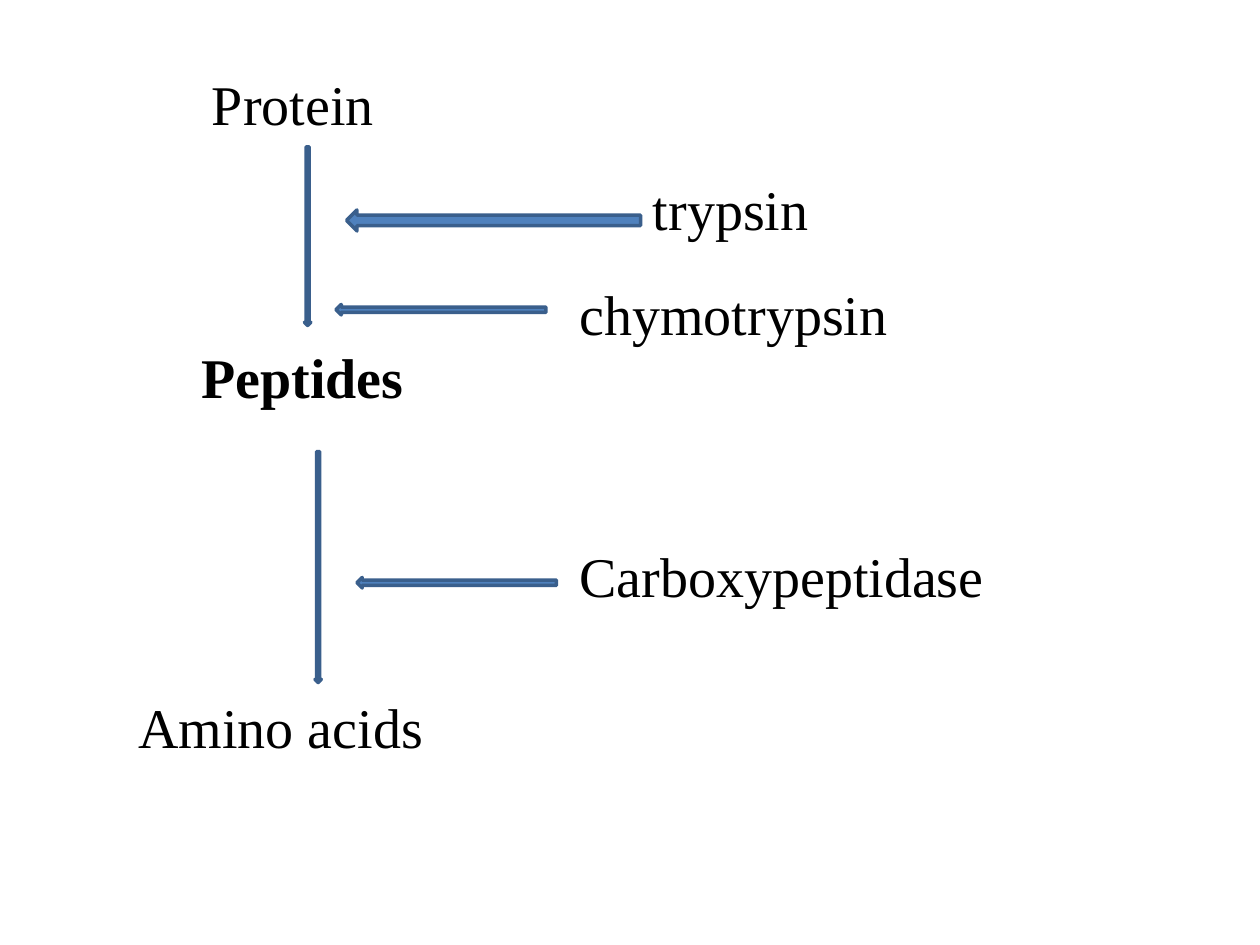
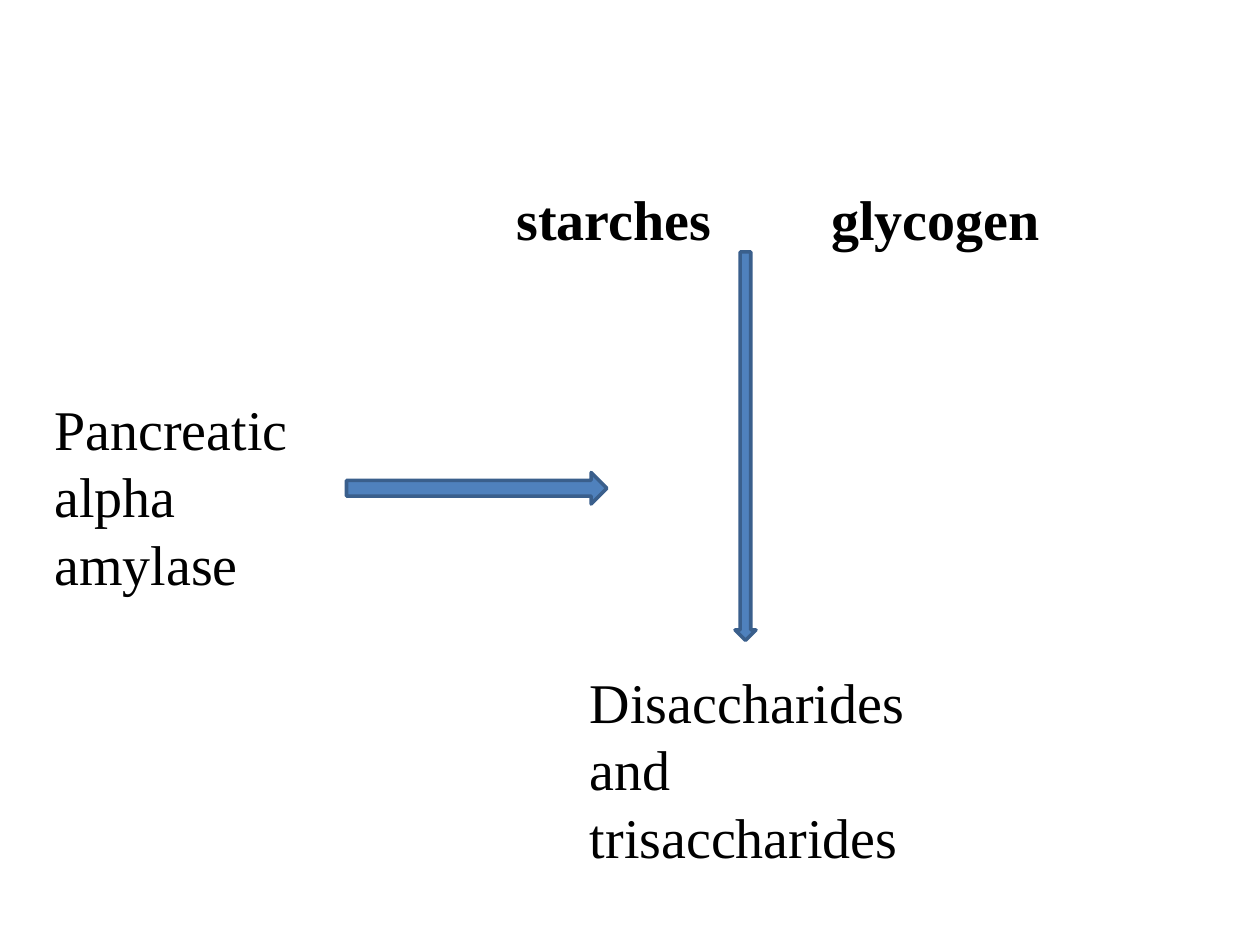
import pptx
import pptx.dml.color
import pptx.enum.shapes
import pptx.enum.text
import pptx.oxml
import pptx.oxml.ns
import pptx.util

# Shared look: 120 px to the inch
PX = 7620
FONT = "Times New Roman"
TEXT_SIZE = 32
BLACK, WHITE, ARROW_FILL, ARROW_EDGE = "000000", "FFFFFF", "4F81BD", "3A5F8C"
LABEL_HEIGHT, TALL_LABEL_HEIGHT = 76, 206
ARROWS = pptx.enum.shapes.MSO_SHAPE
DOWN, LEFT, RIGHT = ARROWS.DOWN_ARROW, ARROWS.LEFT_ARROW, ARROWS.RIGHT_ARROW


def color(hex_string):
    return pptx.dml.color.RGBColor.from_string(hex_string)


def box(*lengths):
    return [length * PX for length in lengths]


# Each label: text, left, top, width, height, bold
# Each arrow: direction, left, top, width, height
protein_digestion = (
    [
        ("trypsin", 610, 160, 200, LABEL_HEIGHT, False),
        ("chymotrypsin", 540, 260, 380, LABEL_HEIGHT, False),
        ("Carboxypeptidase", 540, 510, 550, LABEL_HEIGHT, False),
        ("Protein", 190, 60, 200, LABEL_HEIGHT, False),
        ("Peptides", 180, 320, 230, LABEL_HEIGHT, True),
        ("Amino acids", 120, 654, 330, LABEL_HEIGHT, False),
    ],
    [
        (DOWN, 290, 140, 6, 170),
        (DOWN, 300, 430, 6, 220),
        (LEFT, 330, 200, 280, 20),
        (LEFT, 320, 290, 200, 10),
        (LEFT, 340, 550, 190, 10),
    ],
)
starch_digestion = (
    [
        ("Pancreatic alpha amylase", 40, 370, 290, TALL_LABEL_HEIGHT, False),
        ("starches", 480, 170, 240, LABEL_HEIGHT, True),
        ("glycogen", 780, 170, 240, LABEL_HEIGHT, True),
        ("Disaccharides and trisaccharides", 550, 630, 390, TALL_LABEL_HEIGHT, False),
    ],
    [
        (DOWN, 700, 240, 20, 370),
        (RIGHT, 330, 450, 248, 30),
    ],
)

deck = pptx.Presentation()
deck.slide_width, deck.slide_height = box(1200, 900)
blank_layout = deck.slide_layouts[6]

for labels, arrows in (protein_digestion, starch_digestion):
    slide = deck.slides.add_slide(blank_layout)

    # Substances and enzymes
    for text, left, top, width, height, bold in labels:
        label = slide.shapes.add_textbox(*box(left, top, width, height))
        label.fill.solid()
        label.fill.fore_color.rgb = color(WHITE)
        frame = label.text_frame
        frame.word_wrap = True
        frame.auto_size = pptx.enum.text.MSO_AUTO_SIZE.SHAPE_TO_FIT_TEXT
        frame.text = text
        paragraph = frame.paragraphs[0]
        # Space before is half a line, which needs XML
        space_before = pptx.oxml.parse_xml(
            f'<a:spcBef {pptx.oxml.ns.nsdecls("a")}><a:spcPct val="50000"/></a:spcBef>'
        )
        paragraph._p.get_or_add_pPr().append(space_before)
        font = paragraph.runs[0].font
        font.name = FONT
        font.size = pptx.util.Pt(TEXT_SIZE)
        font.bold = bold
        font.color.rgb = color(BLACK)

    # Reaction steps and enzyme actions
    for direction, *place in arrows:
        arrow = slide.shapes.add_shape(direction, *box(*place))
        arrow.shadow.inherit = False
        arrow.fill.solid()
        arrow.fill.fore_color.rgb = color(ARROW_FILL)
        arrow.line.color.rgb = color(ARROW_EDGE)
        arrow.line.width = pptx.util.Pt(2)

deck.save("out.pptx")
